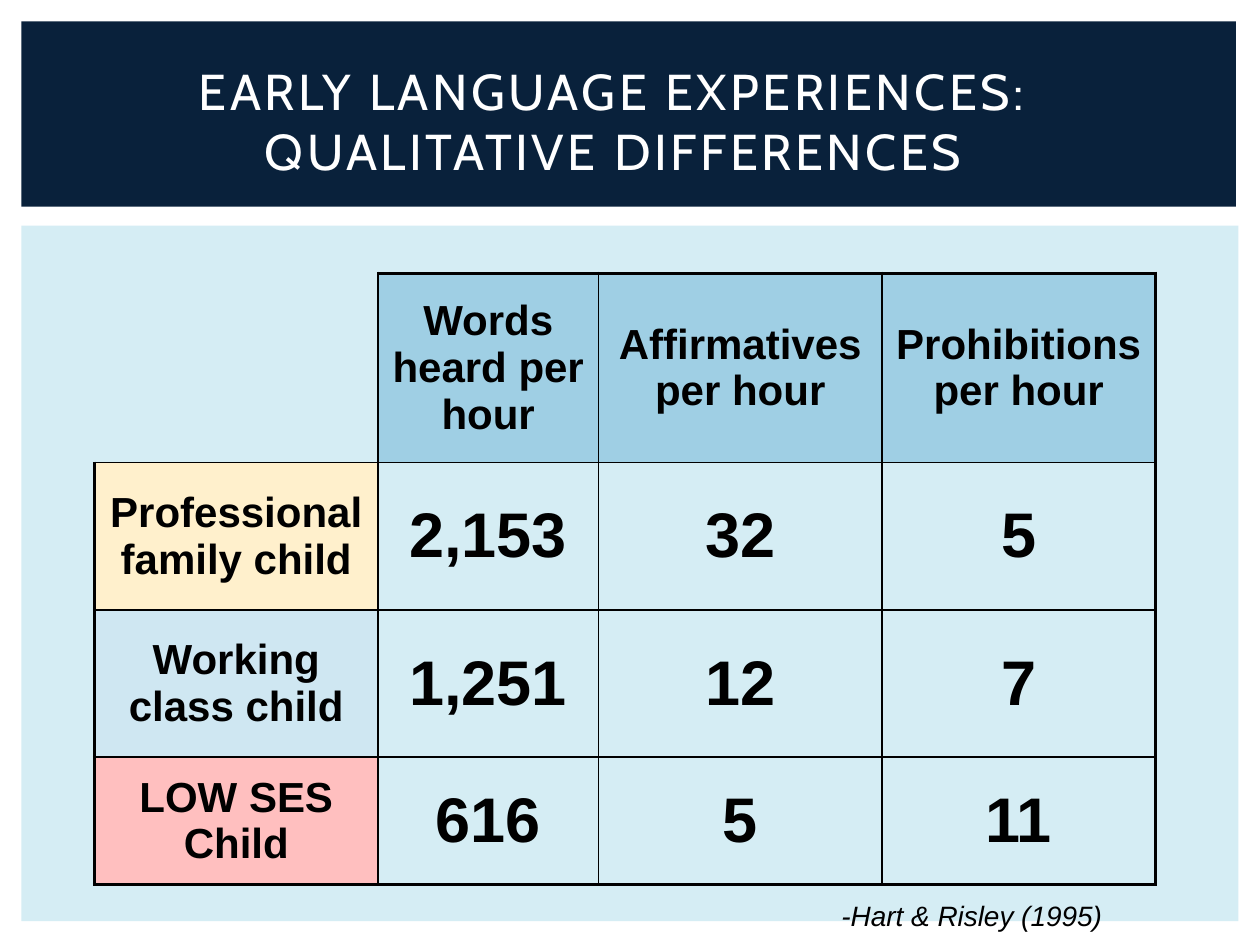
"""Build the slide on qualitative differences in early language experiences."""
from lxml.etree import SubElement
from pptx import Presentation
from pptx.dml.color import RGBColor
from pptx.enum.shapes import MSO_SHAPE
from pptx.enum.text import MSO_ANCHOR, PP_ALIGN
from pptx.oxml.ns import qn
from pptx.util import Inches, Pt

COLORS = {
    "panel": "D5EDF4", "banner": "09213B", "white": "FFFFFF", "black": "000000",
    "header": "9FCFE4", "professional": "FFF0CC", "working": "CFE7F2", "low": "FFBFBF",
}
BACKDROPS = [("panel", (0.17, 1.79, 9.66, 5.52)), ("banner", (0.17, 0.17, 9.64, 1.47))]
TITLE = ["EARLY LANGUAGE EXPERIENCES:", "QUALITATIVE DIFFERENCES"]
CITATION = ["-Hart & Risley (1995)"]
HEADINGS = ["", "Words heard per hour", "Affirmatives per hour", "Prohibitions per hour"]
FAMILIES = [
    ("professional", ["Professional family child", "2,153", "32", "5"]),
    ("working", ["Working class child", "1,251", "12", "7"]),
    ("low", ["LOW SES Child", "616", "5", "11"]),
]
COLUMN_WIDTHS = [2.25, 1.75, 2.25, 2.17]
ROW_HEIGHTS = [1.5, 1.17, 1.17, 1.01]
THIN, THICK = 1, 2.25


def rgb(name):
    return RGBColor.from_string(COLORS[name])


def write(frame, lines, size, font="Arial", color="black", bold=False, italic=False,
          align=PP_ALIGN.CENTER, spacing=0):
    paragraph = frame.paragraphs[0]
    paragraph.alignment = align
    for index, line in enumerate(lines):
        if index:
            paragraph.add_line_break()
        run = paragraph.add_run()
        run.text = line
        run.font.size, run.font.name = Pt(size), font
        run.font.bold, run.font.italic = bold, italic
        run.font.color.rgb = rgb(color)
        if spacing:
            run.font._element.set("spc", str(spacing * 100))


def add_text(slide, box, lines, anchor=MSO_ANCHOR.TOP, **style):
    frame = slide.shapes.add_textbox(*map(Inches, box)).text_frame
    frame.word_wrap = True
    frame.vertical_anchor = anchor
    write(frame, lines, **style)


def set_borders(cell, widths):
    properties = cell._tc.get_or_add_tcPr()
    for index, (side, width) in enumerate(widths.items()):
        line = SubElement(properties, qn(f"a:ln{side}"), w=str(Pt(width)))
        if width:
            fill = SubElement(line, qn("a:solidFill"))
            SubElement(fill, qn("a:srgbClr"), val=COLORS["black"])
        else:
            SubElement(line, qn("a:noFill"))
        properties.insert(index, line)


def border_widths(row, column):
    last_row, last_column = len(ROW_HEIGHTS) - 1, len(COLUMN_WIDTHS) - 1
    if row == column == 0:
        return {"L": 0, "R": THIN, "T": 0, "B": THIN}
    return {
        "L": THICK if column == 0 else THIN,
        "R": THICK if column == last_column else THIN,
        "T": THICK if row == 0 else THIN,
        "B": THICK if row == last_row else THIN,
    }


def add_family_table(slide):
    rows = [("header", HEADINGS)] + FAMILIES
    table = slide.shapes.add_table(
        len(rows), len(HEADINGS), Inches(0.75), Inches(2.17),
        Inches(sum(COLUMN_WIDTHS)), Inches(sum(ROW_HEIGHTS))).table
    table.first_row = table.horz_banding = False
    for column, width in zip(table.columns, COLUMN_WIDTHS):
        column.width = Inches(width)
    for row, height in zip(table.rows, ROW_HEIGHTS):
        row.height = Inches(height)
    for r, (color, texts) in enumerate(rows):
        for c, text in enumerate(texts):
            cell = table.cell(r, c)
            is_label = r == 0 or c == 0
            cell.vertical_anchor = MSO_ANCHOR.MIDDLE
            if is_label and text:
                cell.fill.solid()
                cell.fill.fore_color.rgb = rgb(color)
            else:
                cell.fill.background()
            set_borders(cell, border_widths(r, c))
            if text:
                write(cell.text_frame, [text], size=24 if is_label else 36, bold=True)


def main():
    deck = Presentation()
    deck.slide_width, deck.slide_height = Inches(10), Inches(7.5)
    slide = deck.slides.add_slide(deck.slide_layouts[6])
    for color, box in BACKDROPS:
        backdrop = slide.shapes.add_shape(MSO_SHAPE.RECTANGLE, *map(Inches, box))
        backdrop.shadow.inherit = False
        backdrop.fill.solid()
        backdrop.fill.fore_color.rgb = rgb(color)
        backdrop.line.fill.background()
    add_text(slide, (0.83, 0.58, 8.08, 0.75), TITLE, anchor=MSO_ANCHOR.MIDDLE,
             size=28.8, font="Cabin", color="white", spacing=2)
    add_family_table(slide)
    add_text(slide, (6.58, 7.08, 2.92, 0.37), CITATION, size=16, italic=True,
             align=PP_ALIGN.LEFT)
    deck.save("out.pptx")


if __name__ == "__main__":
    main()
